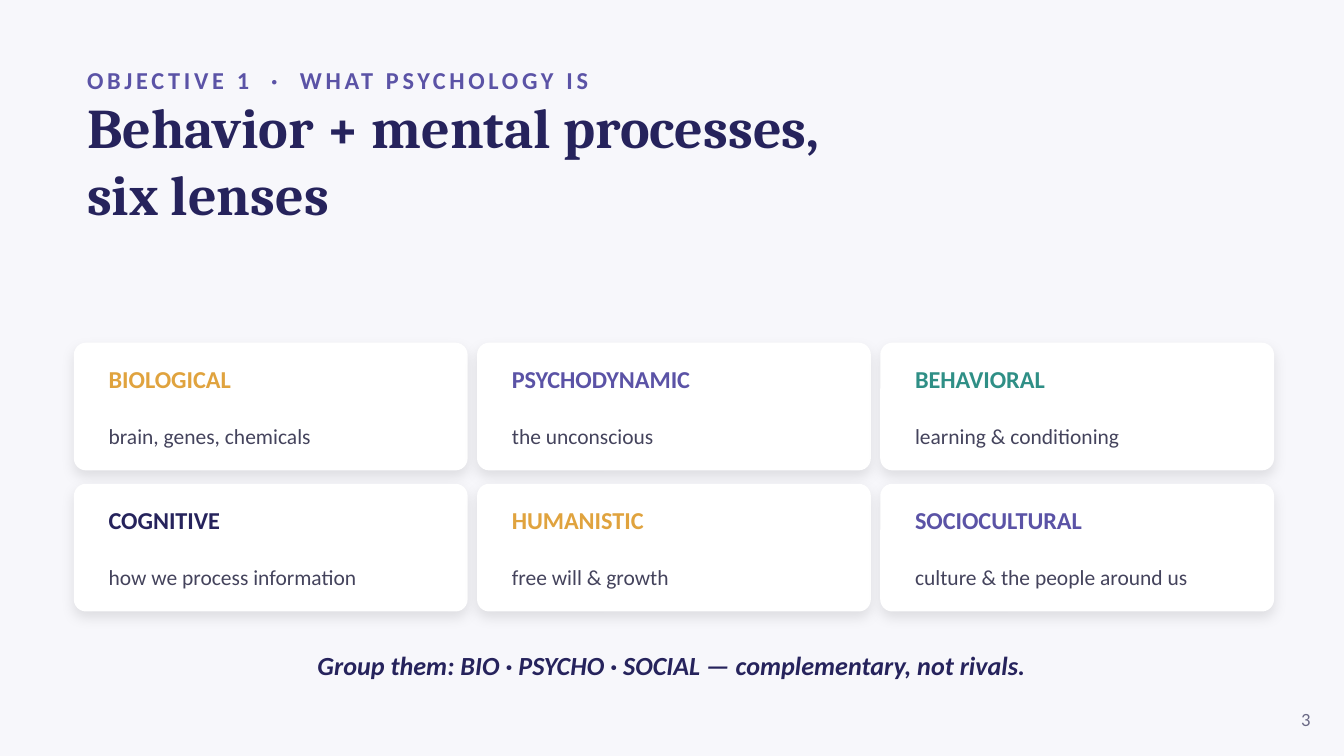
import dataclasses
import typing

import lxml.etree
import pptx
import pptx.dml.color
import pptx.enum.shapes
import pptx.enum.text
import pptx.oxml.ns
import pptx.util

Inches = pptx.util.Inches
Pt = pptx.util.Pt
ALIGN = pptx.enum.text.PP_ALIGN

# Palette
PAPER, WHITE, BLACK = "F7F7FB", "FFFFFF", "000000"
NAVY, VIOLET, GOLD, TEAL = "26235C", "5B53A6", "E0A33E", "2F8F86"
SLATE, MUTED = "44435C", "6B6A86"

# Page, 16:9
WIDTH = 10
HEIGHT = WIDTH * 9 / 16

# Card grid
LEFT, TOP = 0.55, 2.55
STEP_X, STEP_Y = 3, 1.05
CARD_W, CARD_H = 2.93, 0.95
PAD_X, PAD_Y = 0.16, 0.1
ROUND = 0.09 / CARD_H
COLS = 3


@dataclasses.dataclass
class Line:
    text: str
    color: str
    font: dict[str, typing.Any]
    track: float = 0
    before: float = 0
    align: typing.Any = ALIGN.LEFT


@dataclasses.dataclass
class Lens:
    name: str
    focus: str
    color: str


def paint(target: typing.Any, color: str) -> None:
    """Give a fill or a font a solid colour."""
    if hasattr(target, "solid"):
        target.solid()
        target.fore_color.rgb = pptx.dml.color.RGBColor.from_string(color)
    else:
        target.color.rgb = pptx.dml.color.RGBColor.from_string(color)


def style(size: float, name: str = "Calibri", **more: bool) -> dict[str, typing.Any]:
    return {"size": Pt(size), "name": name, **more}


def write(slide: typing.Any, x: float, y: float, w: float, h: float,
          lines: list[Line]) -> None:
    box = slide.shapes.add_textbox(Inches(x), Inches(y), Inches(w), Inches(h))
    frame = box.text_frame
    frame.word_wrap = True
    frame.vertical_anchor = pptx.enum.text.MSO_ANCHOR.MIDDLE
    for i, line in enumerate(lines):
        para = frame.add_paragraph() if i else frame.paragraphs[0]
        para.alignment = line.align
        if line.before:
            para.space_before = Pt(line.before)
        run = para.add_run()
        run.text = line.text
        for key, value in line.font.items():
            setattr(run.font, key, value)
        paint(run.font, line.color)
        if line.track:
            run._r.get_or_add_rPr().set("spc", str(int(line.track * 100)))


def shade(shape: typing.Any) -> None:
    """Add a soft shadow that falls straight down."""
    shape.shadow.inherit = False
    qn = pptx.oxml.ns.qn
    effects = shape._element.spPr.find(qn("a:effectLst"))
    outer = lxml.etree.SubElement(
        effects, qn("a:outerShdw"), blurRad=str(Pt(7)), dist=str(Pt(3)),
        dir="5400000", algn="bl", rotWithShape="0")
    tint = lxml.etree.SubElement(outer, qn("a:srgbClr"), val=BLACK)
    lxml.etree.SubElement(tint, qn("a:alpha"), val="10000")


def card(slide: typing.Any, x: float, y: float, lens: Lens) -> None:
    shape = slide.shapes.add_shape(
        pptx.enum.shapes.MSO_SHAPE.ROUNDED_RECTANGLE,
        Inches(x), Inches(y), Inches(CARD_W), Inches(CARD_H))
    shape.adjustments[0] = ROUND
    paint(shape.fill, WHITE)
    shape.line.fill.background()
    shade(shape)
    write(slide, x + PAD_X, y + PAD_Y, CARD_W - 2 * PAD_X, CARD_H - 2 * PAD_Y, [
        Line(lens.name, lens.color, style(13, bold=True)),
        Line(lens.focus, SLATE, style(11.5, bold=False), before=16),
    ])


LENSES = [
    Lens("BIOLOGICAL", "brain, genes, chemicals", GOLD),
    Lens("PSYCHODYNAMIC", "the unconscious", VIOLET),
    Lens("BEHAVIORAL", "learning & conditioning", TEAL),
    Lens("COGNITIVE", "how we process information", NAVY),
    Lens("HUMANISTIC", "free will & growth", GOLD),
    Lens("SOCIOCULTURAL", "culture & the people around us", VIOLET),
]


def main() -> None:
    deck = pptx.Presentation()
    deck.slide_width, deck.slide_height = Inches(WIDTH), Inches(HEIGHT)
    slide = deck.slides.add_slide(deck.slide_layouts[6])
    paint(slide.background.fill, PAPER)

    # Heading
    write(slide, LEFT, 0.42, 9, 0.35, [
        Line("OBJECTIVE 1  ·  WHAT PSYCHOLOGY IS", VIOLET,
             style(13, bold=True), track=2)])
    title = style(30, "Cambria", bold=True)
    write(slide, LEFT, 0.74, 8.9, 0.9, [
        Line(text, NAVY, title)
        for text in ("Behavior + mental processes,", "six lenses")])

    # Six lenses
    for i, lens in enumerate(LENSES):
        row, col = divmod(i, COLS)
        card(slide, LEFT + col * STEP_X, TOP + row * STEP_Y, lens)

    # Takeaway and page number
    write(slide, LEFT, 4.75, 8.9, 0.4, [
        Line("Group them: BIO · PSYCHO · SOCIAL — complementary, not rivals.",
             NAVY, style(14, bold=True, italic=True), align=ALIGN.CENTER)])
    write(slide, 9.35, 5.2, 0.5, 0.3, [
        Line("3", MUTED, style(10), align=ALIGN.RIGHT)])

    deck.save("out.pptx")


if __name__ == "__main__":
    main()
